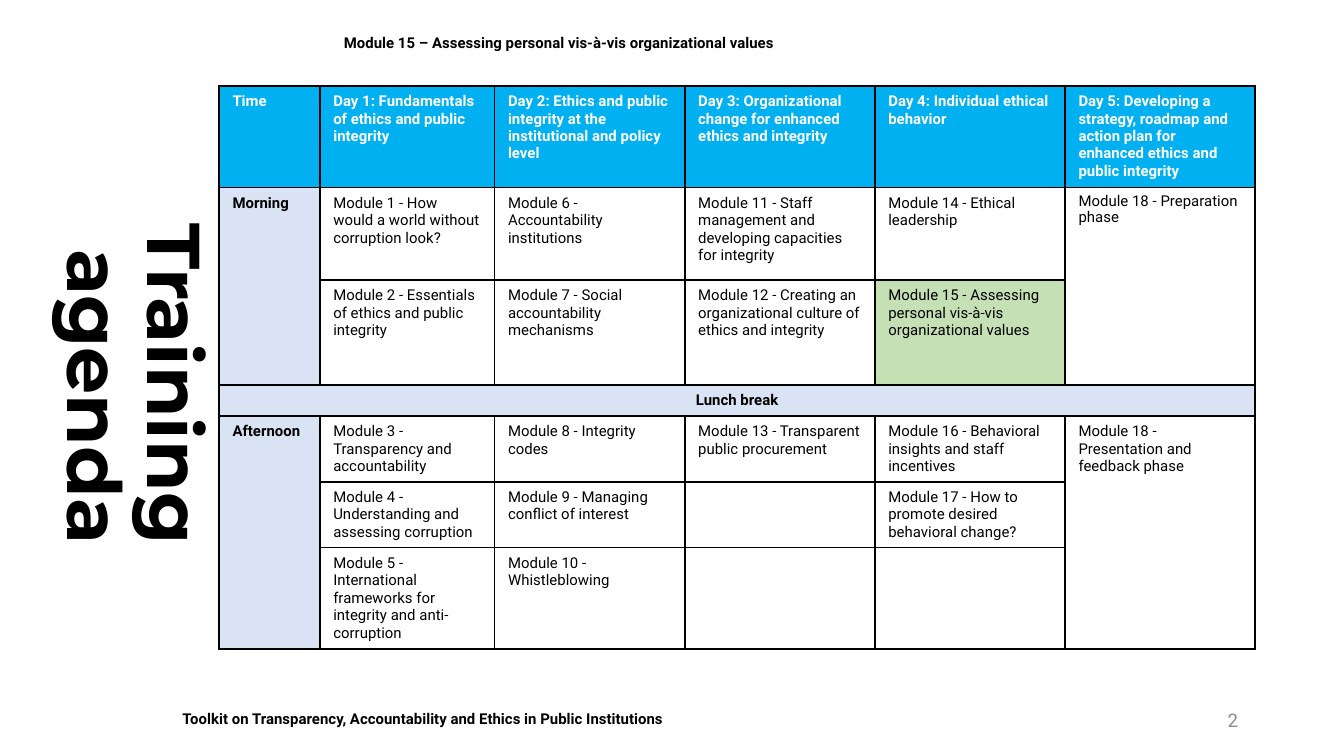
from dataclasses import dataclass

from lxml import etree
from pptx import Presentation
from pptx.dml.color import RGBColor
from pptx.enum import shapes, text
from pptx.oxml import ns
from pptx.util import Inches, Pt


@dataclass(frozen=True)
class Theme:
    body_font: str = "Roboto"
    title_font: str = "Montserrat"
    black: str = "000000"
    white: str = "FFFFFF"
    grey: str = "8C8C8C"
    header: str = "00B0F0"
    session: str = "DAE3F3"
    current: str = "C5E0B4"
    body_size: float = 8
    number_size: float = 10
    title_size: float = 40
    border: float = 1


@dataclass(frozen=True)
class Box:
    left: float
    top: float
    width: float
    height: float

    def lengths(self) -> tuple:
        return tuple(Inches(v) for v in (self.left, self.top, self.width, self.height))


@dataclass(frozen=True)
class Entry:
    words: str = ""
    fill: str | None = None
    color: str = Theme.black
    bold: bool = False
    align: text.PP_ALIGN = text.PP_ALIGN.LEFT
    line_spacing: float | None = None
    rows: int = 1
    columns: int = 1


THEME = Theme()


def write(frame, words: str, *, font: str = THEME.body_font, size: float = THEME.body_size,
          color: str = THEME.black, bold: bool = False,
          align: text.PP_ALIGN = text.PP_ALIGN.LEFT,
          anchor: text.MSO_ANCHOR | None = None, line_spacing: float | None = None,
          space_after: float | None = None) -> None:
    frame.word_wrap = True
    if anchor is not None:
        frame.vertical_anchor = anchor
    paragraph = frame.paragraphs[0]
    paragraph.alignment = align
    if line_spacing is not None:
        paragraph.line_spacing = line_spacing
    if space_after is not None:
        paragraph.space_after = Pt(space_after)
    if not words:
        end = etree.SubElement(paragraph._p, ns.qn("a:endParaRPr"))
        end.set("sz", str(int(size * 100)))
        return
    run = paragraph.add_run()
    run.text = words
    run.font.name = font
    run.font.size = Pt(size)
    run.font.bold = bold
    run.font.color.rgb = RGBColor.from_string(color)


def add_label(slide, box: Box, words: str, **style) -> None:
    label = slide.shapes.add_textbox(*box.lengths())
    write(label.text_frame, words, anchor=text.MSO_ANCHOR.MIDDLE, **style)


def add_borders(cell) -> None:
    properties = cell._tc.get_or_add_tcPr()
    for side in ("lnL", "lnR", "lnT", "lnB"):
        line = etree.SubElement(properties, ns.qn(f"a:{side}"), w=str(Pt(THEME.border)))
        solid = etree.SubElement(line, ns.qn("a:solidFill"))
        etree.SubElement(solid, ns.qn("a:srgbClr"), val=THEME.black)


def fill_cell(cell, entry: Entry) -> None:
    add_borders(cell)
    cell.margin_bottom = Inches(0.04)
    if entry.fill:
        cell.fill.solid()
        cell.fill.fore_color.rgb = RGBColor.from_string(entry.fill)
    else:
        cell.fill.background()
    write(cell.text_frame, entry.words, color=entry.color, bold=entry.bold,
          align=entry.align, line_spacing=entry.line_spacing)


def add_agenda(slide, box: Box, widths: list[float], heights: list[float],
               entries: list[list[Entry]]) -> None:
    agenda = slide.shapes.add_table(len(heights), len(widths), *box.lengths()).table
    agenda.first_row = False
    agenda.horz_banding = False
    for column, width in zip(agenda.columns, widths):
        column.width = Inches(width)
    for row, height in zip(agenda.rows, heights):
        row.height = Inches(height)
    for r, row_entries in enumerate(entries):
        for c, entry in enumerate(row_entries):
            fill_cell(agenda.cell(r, c), entry)
    for r, row_entries in enumerate(entries):
        for c, entry in enumerate(row_entries):
            if entry.rows > 1 or entry.columns > 1:
                agenda.cell(r, c).merge(agenda.cell(r + entry.rows - 1, c + entry.columns - 1))


def heading(words: str) -> Entry:
    return Entry(words, THEME.header, THEME.white, True)


def session(words: str, **span) -> Entry:
    return Entry(words, THEME.session, bold=True, **span)


COVERED = Entry()
COVERED_SESSION = Entry(fill=THEME.session)

AGENDA = [
    [heading(words) for words in (
        "Time",
        "Day 1: Fundamentals of ethics and public integrity",
        "Day 2: Ethics and public integrity at the institutional and policy level",
        "Day 3: Organizational change for enhanced ethics and integrity",
        "Day 4: Individual ethical behavior",
        "Day 5: Developing a strategy, roadmap and action plan for enhanced ethics "
        "and public integrity")],
    [session("Morning", rows=2),
     Entry("Module 1 - How would a world without corruption look?"),
     Entry("Module 6 - Accountability institutions"),
     Entry("Module 11 - Staff management and developing capacities for integrity"),
     Entry("Module 14 - Ethical leadership"),
     Entry("Module 18 - Preparation phase", line_spacing=0.9, rows=2)],
    [COVERED_SESSION,
     Entry("Module 2 - Essentials of ethics and public integrity"),
     Entry("Module 7 - Social accountability mechanisms"),
     Entry("Module 12 - Creating an organizational culture of ethics and integrity"),
     Entry("Module 15 - Assessing personal vis-à-vis organizational values", THEME.current),
     COVERED],
    [session("Lunch break", align=text.PP_ALIGN.CENTER, columns=6)] + [COVERED_SESSION] * 5,
    [session("Afternoon", rows=3),
     Entry("Module 3 - Transparency and accountability"),
     Entry("Module 8 - Integrity codes"),
     Entry("Module 13 - Transparent public procurement"),
     Entry("Module 16 - Behavioral insights and staff incentives"),
     Entry("Module 18 - Presentation and feedback phase", rows=3)],
    [COVERED_SESSION,
     Entry("Module 4 - Understanding and assessing corruption"),
     Entry("Module 9 - Managing conflict of interest"),
     Entry(),
     Entry("Module 17 - How to promote desired behavioral change?"),
     COVERED],
    [COVERED_SESSION,
     Entry("Module 5 - International frameworks for integrity and anti-corruption"),
     Entry("Module 10 - Whistleblowing", THEME.white),
     Entry(), Entry(), COVERED],
]


def main() -> None:
    deck = Presentation()
    deck.slide_width = Inches(10)
    deck.slide_height = deck.slide_width * 9 // 16
    title_only = deck.slide_layouts[5]
    title_only.placeholders[0].text_frame._txBody.bodyPr.set("vert", "eaVert")
    slide = deck.slides.add_slide(title_only)

    toolkit = slide.shapes.add_shape(shapes.MSO_SHAPE.RECTANGLE,
                                     *Box(1.26, 5.23, 7.17, 0.24).lengths())
    toolkit.shadow.inherit = False
    toolkit.fill.solid()
    toolkit.fill.fore_color.rgb = RGBColor.from_string(THEME.white)
    toolkit.line.fill.background()
    write(toolkit.text_frame,
          "Toolkit on Transparency, Accountability and Ethics in Public Institutions",
          bold=True, anchor=text.MSO_ANCHOR.TOP, space_after=18)

    title = slide.shapes.title
    title.left, title.top, title.width, title.height = Box(0.28, 0.64, 1.35, 4.43).lengths()
    title.text_frame.auto_size = text.MSO_AUTO_SIZE.NONE
    title.text_frame._txBody.bodyPr.set("vert", "vert270")
    write(title.text_frame, "Training agenda", font=THEME.title_font, size=THEME.title_size,
          bold=True, align=text.PP_ALIGN.RIGHT, anchor=text.MSO_ANCHOR.MIDDLE,
          line_spacing=0.9)

    add_label(slide, Box(7.06, 5.21, 2.25, 0.3), "2", size=THEME.number_size,
              color=THEME.grey, align=text.PP_ALIGN.RIGHT)
    add_label(slide, Box(2.46, 0.1, 6.85, 0.44),
              "Module 15 – Assessing personal vis-à-vis organizational values", bold=True)
    agenda_box = Box(1.63, 0.64, 7.71, 4.18)
    time_width, first_day_width = 0.75, 1.3
    day_width = (agenda_box.width - time_width - first_day_width) / 4
    add_agenda(slide, agenda_box, [time_width, first_day_width] + [day_width] * 4,
               [0.75, 0.69, 0.78, 0.23, 0.49, 0.49, 0.75], AGENDA)
    deck.save("out.pptx")


if __name__ == "__main__":
    main()
